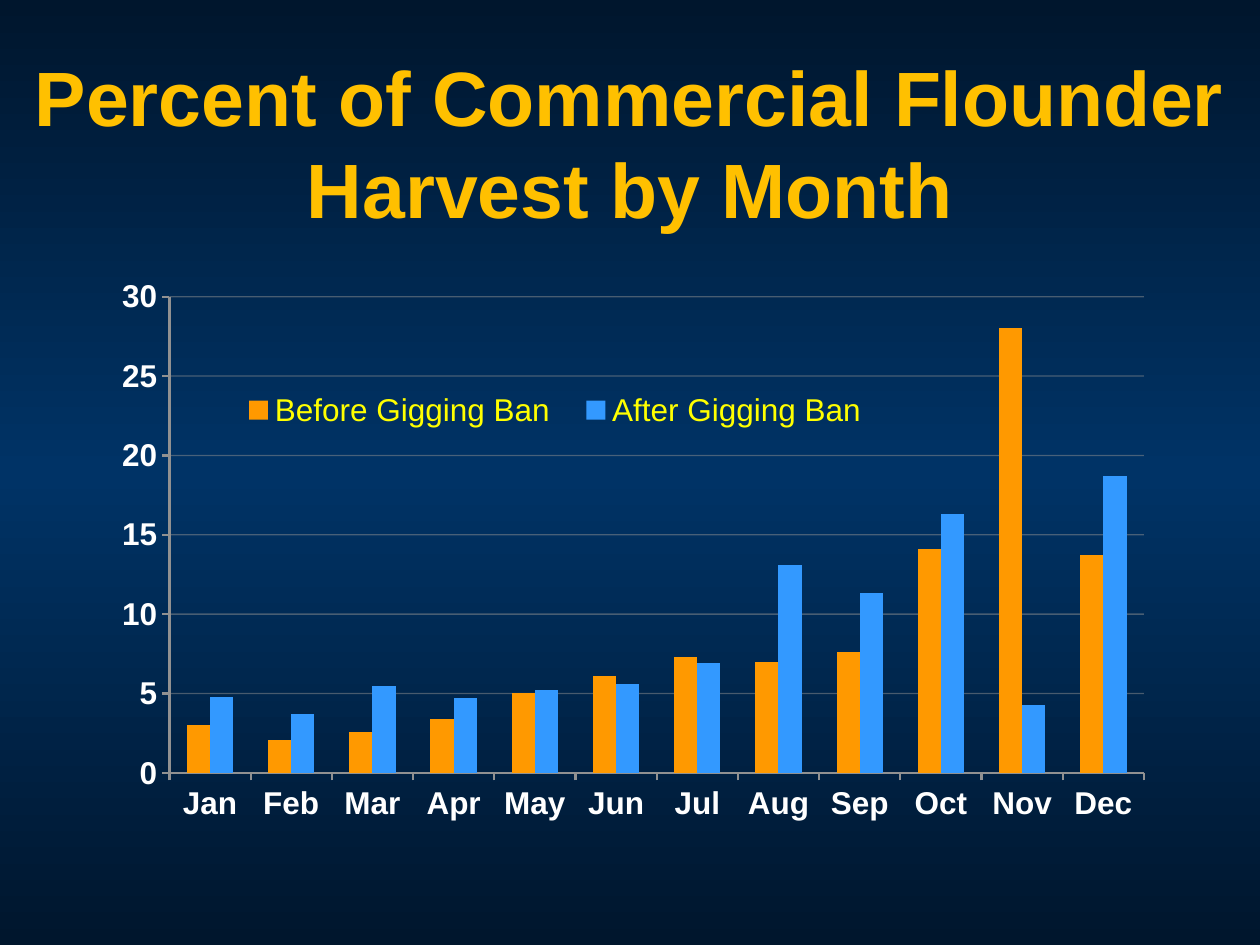
from copy import deepcopy

from lxml.etree import SubElement
from pptx import Presentation
from pptx.chart.data import CategoryChartData
from pptx.dml.color import RGBColor
from pptx.enum.chart import XL_CHART_TYPE as ChartType
from pptx.enum.chart import XL_LEGEND_POSITION as LegendPosition
from pptx.enum.chart import XL_TICK_MARK as TickMark
from pptx.enum.text import MSO_ANCHOR as Anchor
from pptx.enum.text import MSO_AUTO_SIZE as AutoSize
from pptx.enum.text import PP_ALIGN as Align
from pptx.oxml import parse_xml
from pptx.oxml.ns import nsdecls, qn
from pptx.util import Inches, Pt

WIDTH, HEIGHT = Inches(10), Inches(7.5)
FONT = "Arial"
GOLD, YELLOW, WHITE, GRAY = "FFC000", "FFFF00", "FFFFFF", "919191"
NIGHT, NAVY = "00162D", "003366"

MONTHS = "Jan Feb Mar Apr May Jun Jul Aug Sep Oct Nov Dec".split()
HARVEST = {
    "Before Gigging Ban": ("FF9900", [3, 2.1, 2.6, 3.4, 5, 6.1, 7.3, 7, 7.6, 14.1, 28, 13.7]),
    "After Gigging Ban": ("3399FF", [4.8, 3.7, 5.5, 4.7, 5.2, 5.6, 6.9, 13.1, 11.3, 16.3, 4.3, 18.7]),
}


def rgb(color):
    return RGBColor.from_string(color)


def share(left, top, width, height):
    """Turn shares of the slide's size into lengths."""
    return [round(part * side) for part, side in
            zip((left, top, width, height), (WIDTH, HEIGHT) * 2)]


def format_font(font, size, color, bold=False):
    font.name, font.size, font.bold = FONT, Pt(size), bold
    font.color.rgb = rgb(color)


def write_text(box, text, size=18, color=WHITE, bold=False, align=Align.CENTER,
               spacing=1.0):
    frame = box.text_frame
    frame.word_wrap, frame.auto_size = True, AutoSize.NONE
    frame.vertical_anchor = Anchor.MIDDLE
    para = frame.paragraphs[0]
    para.alignment, para.line_spacing = align, spacing
    span = para.add_run()
    span.text = text
    format_font(span.font, size, color, bold)


def paint_background(page, edge, middle):
    fill = page.background.fill
    fill.gradient()
    fill.gradient_angle = 90
    first = fill.gradient_stops[0]._gs
    first.addnext(deepcopy(first))
    for stop, position, color in zip(fill.gradient_stops, (0, 0.5, 1), (edge, middle, edge)):
        stop.position = position
        stop.color.rgb = rgb(color)


def place_part(element, left, top, width, height, inner=False):
    """Fix a chart part at shares of the chart's size."""
    for old in element.findall(qn("c:layout")):
        element.remove(old)
    layout = parse_xml(f"<c:layout {nsdecls('c')}><c:manualLayout/></c:layout>")
    manual = layout[0]
    settings = [("layoutTarget", "inner")] if inner else []
    settings += [("xMode", "edge"), ("yMode", "edge"),
                 ("x", left), ("y", top), ("w", width), ("h", height)]
    for tag, value in settings:
        SubElement(manual, qn(f"c:{tag}")).set("val", str(value))
    position = element.find(qn("c:legendPos"))
    if position is None:
        element.insert(0, layout)
    else:
        position.addnext(layout)


def style_line(line, width, opacity=100):
    line.color.rgb, line.width = rgb(GRAY), Pt(width)
    if opacity < 100:
        color = line.fill._xPr.find(f".//{qn('a:srgbClr')}")
        SubElement(color, qn("a:alpha")).set("val", str(opacity * 1000))


def style_axis(axis):
    axis.major_tick_mark, axis.minor_tick_mark = TickMark.OUTSIDE, TickMark.NONE
    format_font(axis.tick_labels.font, 18, WHITE, bold=True)
    style_line(axis.format.line, 1.25)


def add_column_chart(page, place):
    data = CategoryChartData(number_format="0.0")
    data.categories = MONTHS
    for name, (_, values) in HARVEST.items():
        data.add_series(name, values)
    chart = page.shapes.add_chart(ChartType.COLUMN_CLUSTERED, *place, data).chart
    chart.has_title = False
    format_font(chart.font, 18, YELLOW)

    plot = chart.plots[0]
    plot.vary_by_categories, plot.gap_width, plot.overlap = False, 150, 0
    for series, (color, _) in zip(plot.series, HARVEST.values()):
        series.invert_if_negative = False
        series.format.fill.solid()
        series.format.fill.fore_color.rgb = rgb(color)

    values = chart.value_axis
    for axis in (chart.category_axis, values):
        style_axis(axis)
    values.minimum_scale, values.maximum_scale, values.major_unit = 0, 30, 5
    values.tick_labels.number_format = "0"
    values.tick_labels.number_format_is_linked = False
    style_line(values.major_gridlines.format.line, 0.75, opacity=50)

    chart.has_legend = True
    legend = chart.legend
    legend.position, legend.include_in_layout = LegendPosition.BOTTOM, False
    format_font(legend.font, 18, YELLOW)
    place_part(legend._element, 0.12, 0.2, 0.62, 0.08)
    plot_area = chart._chartSpace.chart.plotArea
    place_part(plot_area, 0.07, 0.04, 0.91, 0.84, inner=True)


def main():
    deck = Presentation()
    deck.slide_width, deck.slide_height = WIDTH, HEIGHT
    page = deck.slides.add_slide(deck.slide_layouts[5])
    paint_background(page, NIGHT, NAVY)

    title = page.shapes.title
    title.left, title.top, title.width, title.height = share(0, 1 / 15, 1, 1 / 6)
    write_text(title, "Percent of Commercial Flounder Harvest by Month",
               size=44, color=GOLD, bold=True)
    add_column_chart(page, share(0.075, 0.29, 0.85, 0.6))
    deck.save("out.pptx")


if __name__ == "__main__":
    main()
